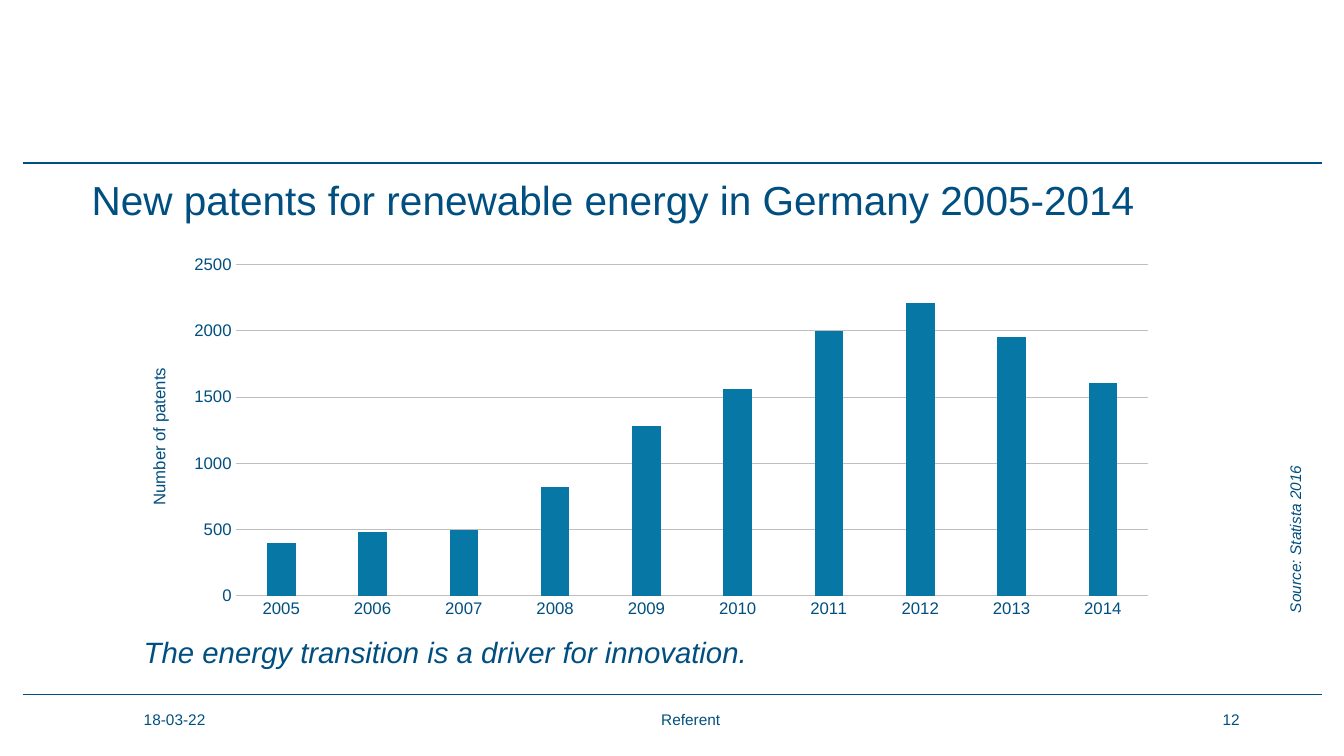
from lxml import etree
from pptx import Presentation
from pptx import util as u
from pptx.chart.data import CategoryChartData
from pptx.dml.color import RGBColor
from pptx.enum import chart as charts, shapes, text
from pptx.oxml import parse_xml
from pptx.oxml.ns import nsdecls, qn

# Content
TITLE = "New patents for renewable energy in Germany 2005-2014"
AXIS_TITLE = "Number of patents"
PATENTS = {
    "2005": 400, "2006": 480, "2007": 500, "2008": 820, "2009": 1280,
    "2010": 1560, "2011": 2000, "2012": 2210, "2013": 1950, "2014": 1610,
}
LEFT, CENTER, RIGHT = text.PP_ALIGN.LEFT, text.PP_ALIGN.CENTER, text.PP_ALIGN.RIGHT
MIDDLE, TOP = text.MSO_ANCHOR.MIDDLE, text.MSO_ANCHOR.TOP

# Text, (left, top, width, height) in cm, size, alignment, italic, anchor, rotation
LABELS = [
    ("The energy transition is a driver for innovation.",
     (3.33, 16, 28.17, 1.02), 21, LEFT, True, MIDDLE, 0),
    ("18-03-22", (3.33, 17.68, 7.65, 1.02), 11, LEFT, False, MIDDLE, 0),
    ("Referent", (11.71, 17.68, 11.46, 1.02), 11, CENTER, False, MIDDLE, 0),
    ("12", (23.95, 17.68, 7.65, 1.02), 11, RIGHT, False, MIDDLE, 0),
    ("Source: Statista 2016", (27.66, 10.31, 10.16, 0.76), 11, LEFT, True, TOP, 270),
]
TITLE_BOX = (2.01, 4.6, 30.35, 1.02)
CHART_BOX = (3.33, 6.3, 26.19, 9.5)
PLOT = {"x": 0.1, "y": 0.04, "w": 0.88, "h": 0.88}
RULES_Y = (4.11, 17.53)
RULE_LEFT, RULE_RIGHT = 0.58, 33.38

FONT = "Arial"
COLORS = {"text": "004F80", "bar": "0778A5", "grid": "BFBFBF"}


def color(name):
    return RGBColor.from_string(COLORS[name])


def style_font(font, size, italic=False):
    font.name, font.size = FONT, u.Pt(size)
    font.bold, font.italic = False, italic
    font.color.rgb = color("text")


def style_line(line, name, width):
    line.color.rgb = color(name)
    line.width = u.Pt(width)


def place(shape, box):
    shape.left, shape.top, shape.width, shape.height = map(u.Cm, box)


def write(shape, content, size, alignment=LEFT, italic=False, anchor=MIDDLE):
    frame = shape.text_frame
    frame.text = content
    frame.word_wrap = True
    frame.auto_size = text.MSO_AUTO_SIZE.NONE
    frame.vertical_anchor = anchor
    frame.margin_left = frame.margin_right = u.Cm(0.3)
    frame.margin_top = frame.margin_bottom = u.Cm(0.15)
    paragraph = frame.paragraphs[0]
    paragraph.alignment = alignment
    paragraph.line_spacing = 0.9
    style_font(paragraph.runs[0].font, size, italic)


def add_rule(slide, y):
    rule = slide.shapes.add_connector(
        shapes.MSO_CONNECTOR.STRAIGHT,
        u.Cm(RULE_LEFT), u.Cm(y), u.Cm(RULE_RIGHT), u.Cm(y))
    style_line(rule.line, "text", 1)
    etree.SubElement(rule.element.spPr, qn("a:effectLst"))


def fix_plot_area(chart):
    plot_area = chart.element.chart.plotArea
    for layout in plot_area.findall(qn("c:layout")):
        plot_area.remove(layout)
    modes = "".join(f'<c:{side}Mode val="edge"/>' for side in "xy")
    sizes = "".join(f'<c:{side} val="{share}"/>' for side, share in PLOT.items())
    plot_area.insert(0, parse_xml(
        f'<c:layout {nsdecls("c")}><c:manualLayout><c:layoutTarget val="inner"/>'
        f"{modes}{sizes}</c:manualLayout></c:layout>"))


def add_patent_chart(slide):
    data = CategoryChartData()
    data.categories = list(PATENTS)
    data.add_series("Series 1", list(PATENTS.values()))
    chart = slide.shapes.add_chart(
        charts.XL_CHART_TYPE.COLUMN_CLUSTERED, *map(u.Cm, CHART_BOX), data).chart
    chart.has_legend = chart.has_title = False
    style_font(chart.font, 12)
    fix_plot_area(chart)

    # Columns
    plot = chart.plots[0]
    plot.gap_width, plot.overlap = 219, -27
    plot.vary_by_categories = False
    fill = plot.series[0].format.fill
    fill.solid()
    fill.fore_color.rgb = color("bar")

    # Axes
    years, counts = chart.category_axis, chart.value_axis
    for axis in (years, counts):
        axis.major_tick_mark = axis.minor_tick_mark = charts.XL_TICK_MARK.NONE
        style_font(axis.tick_labels.font, 12)
    style_line(years.format.line, "grid", 0.75)
    counts.format.line.fill.background()
    counts.minimum_scale, counts.maximum_scale, counts.major_unit = 0, 2500, 500
    counts.has_major_gridlines = True
    style_line(counts.major_gridlines.format.line, "grid", 0.75)
    frame = counts.axis_title.text_frame
    frame.text = AXIS_TITLE
    style_font(frame.paragraphs[0].runs[0].font, 12)


def main():
    presentation = Presentation()
    presentation.slide_width, presentation.slide_height = u.Cm(33.93), u.Cm(19.08)
    slide = presentation.slides.add_slide(presentation.slide_layouts[5])

    # Rules and title
    for y in RULES_Y:
        add_rule(slide, y)
    title = slide.shapes.title
    place(title, TITLE_BOX)
    write(title, TITLE, 29)

    # Message, footer and source
    for content, box, size, alignment, italic, anchor, rotation in LABELS:
        label = slide.shapes.add_textbox(*map(u.Cm, box))
        label.rotation = rotation
        write(label, content, size, alignment, italic, anchor)

    add_patent_chart(slide)
    presentation.save("out.pptx")


if __name__ == "__main__":
    main()
